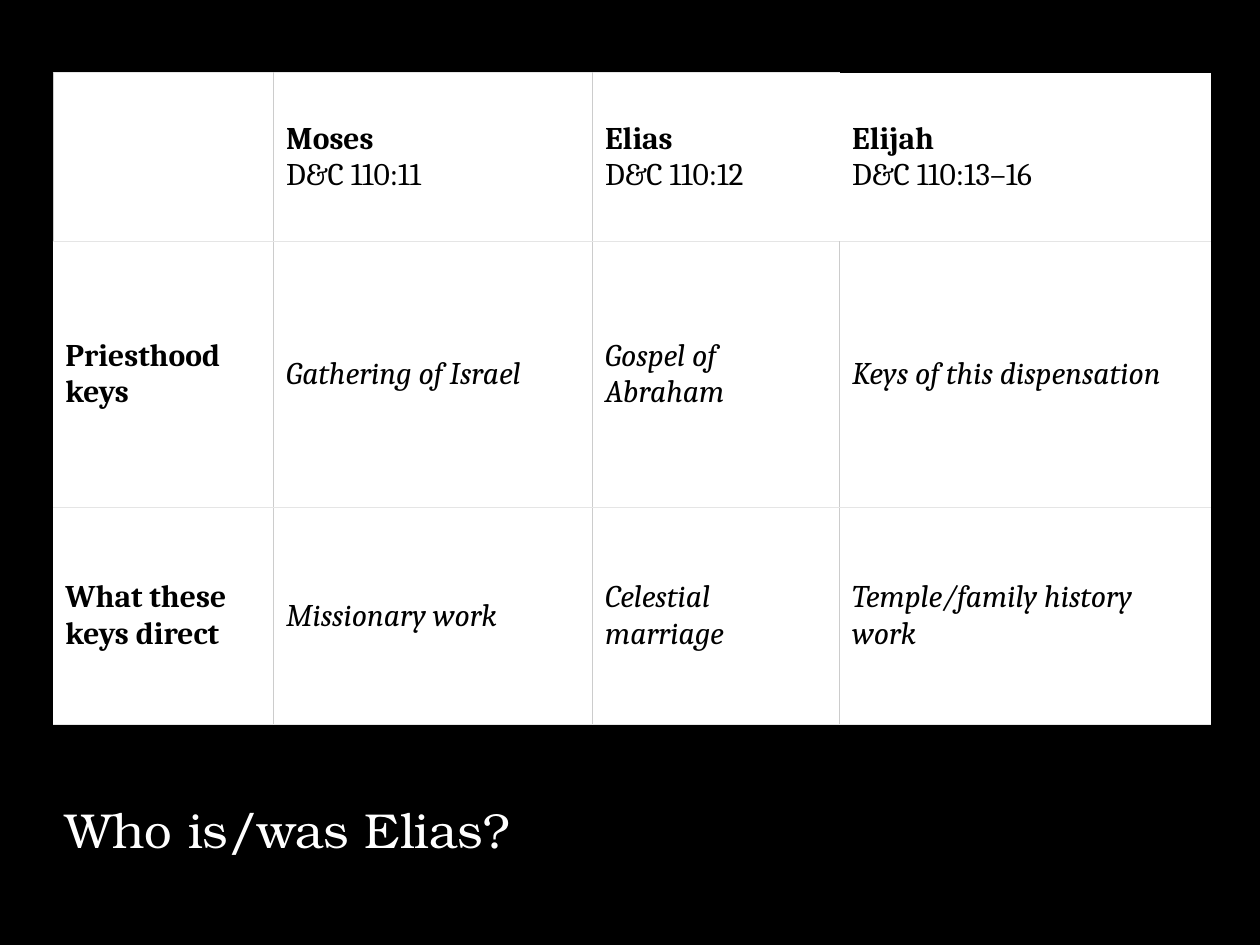
"""Build a slide with a table of priesthood keys above its title."""
from dataclasses import dataclass

from lxml import etree
from pptx import Presentation
from pptx.dml.color import RGBColor
from pptx.enum.text import MSO_ANCHOR, MSO_AUTO_SIZE, PP_ALIGN
from pptx.oxml.ns import qn
from pptx.util import Cm, Pt

MIDDLE = MSO_ANCHOR.MIDDLE
LEFT = PP_ALIGN.LEFT
NO_AUTOFIT = MSO_AUTO_SIZE.NONE


@dataclass(frozen=True)
class Theme:
    black: RGBColor = RGBColor(0x00, 0x00, 0x00)
    white: RGBColor = RGBColor(0xFF, 0xFF, 0xFF)
    column_line: str = "CCCCCC"
    row_line: str = "E5E5E5"
    line_width: Pt = Pt(0.75)
    table_font: str = "Cambria"
    table_size: Pt = Pt(18)
    title_font: str = "TeX Gyre Bonum"
    title_size: Pt = Pt(28)


def add_border(cell, side, color):
    line = etree.SubElement(cell._tc.get_or_add_tcPr(), qn(f"a:ln{side}"))
    if color is None:
        line.set("w", "0")
        etree.SubElement(line, qn("a:noFill"))
        return
    line.set("w", str(int(theme.line_width)))
    fill = etree.SubElement(line, qn("a:solidFill"))
    etree.SubElement(fill, qn("a:srgbClr"), val=color)


theme = Theme()
column_widths = [4.45, 6.43, 4.98, 7.49]
row_heights = [3.4, 5.36, 4.37]
entries = [
    ["", "Moses\nD&C 110:11", "Elias\nD&C 110:12", "Elijah\nD&C 110:13–16"],
    ["Priesthood keys", "Gathering of Israel", "Gospel of Abraham", "Keys of this dispensation"],
    ["What these keys direct", "Missionary work", "Celestial marriage", "Temple/family history work"],
]

deck = Presentation()
deck.slide_width, deck.slide_height = Cm(25.4), Cm(19.05)
page = deck.slides.add_slide(deck.slide_layouts[5])
page.background.fill.solid()
page.background.fill.fore_color.rgb = theme.black

table = page.shapes.add_table(
    len(row_heights), len(column_widths),
    Cm(1.07), Cm(1.47), Cm(sum(column_widths)), Cm(sum(row_heights)),
).table
table.first_row = False
table.horz_banding = False
for column, width in zip(table.columns, column_widths):
    column.width = Cm(width)
for row, height in zip(table.rows, row_heights):
    row.height = Cm(height)

for row_index, row_entries in enumerate(entries):
    is_header = row_index == 0
    ruled_edges = (0, 1, 2) if is_header else (1, 2, 3)
    for column_index, entry in enumerate(row_entries):
        cell = table.cell(row_index, column_index)
        for side, edge in (("L", column_index), ("R", column_index + 1)):
            add_border(cell, side, theme.column_line if edge in ruled_edges else None)
        is_open_top = is_header and column_index == 3
        add_border(cell, "T", None if is_open_top else theme.row_line)
        add_border(cell, "B", theme.row_line)
        cell.fill.solid()
        cell.fill.fore_color.rgb = theme.white
        cell.vertical_anchor = MIDDLE
        cell.margin_left = cell.margin_right = Cm(0.25)
        cell.margin_top = cell.margin_bottom = Cm(0.18)
        cell.text = entry
        for line_index, paragraph in enumerate(cell.text_frame.paragraphs):
            font = paragraph.font
            font.name = theme.table_font
            font.size = theme.table_size
            font.color.rgb = theme.black
            font.bold = line_index == 0 and (is_header or column_index == 0)
            font.italic = not is_header and column_index > 0

title = page.shapes.title
title.left, title.top, title.width, title.height = Cm(1.07), Cm(15.6), Cm(13.31), Cm(1.98)
frame = title.text_frame
frame.text = "Who is/was Elias?"
frame.word_wrap = True
frame.auto_size = NO_AUTOFIT
frame.vertical_anchor = MIDDLE
paragraph = frame.paragraphs[0]
paragraph.alignment = LEFT
paragraph.line_spacing = 1.2
paragraph.font.name = theme.title_font
paragraph.font.size = theme.title_size
paragraph.font.color.rgb = theme.white

deck.save("out.pptx")
